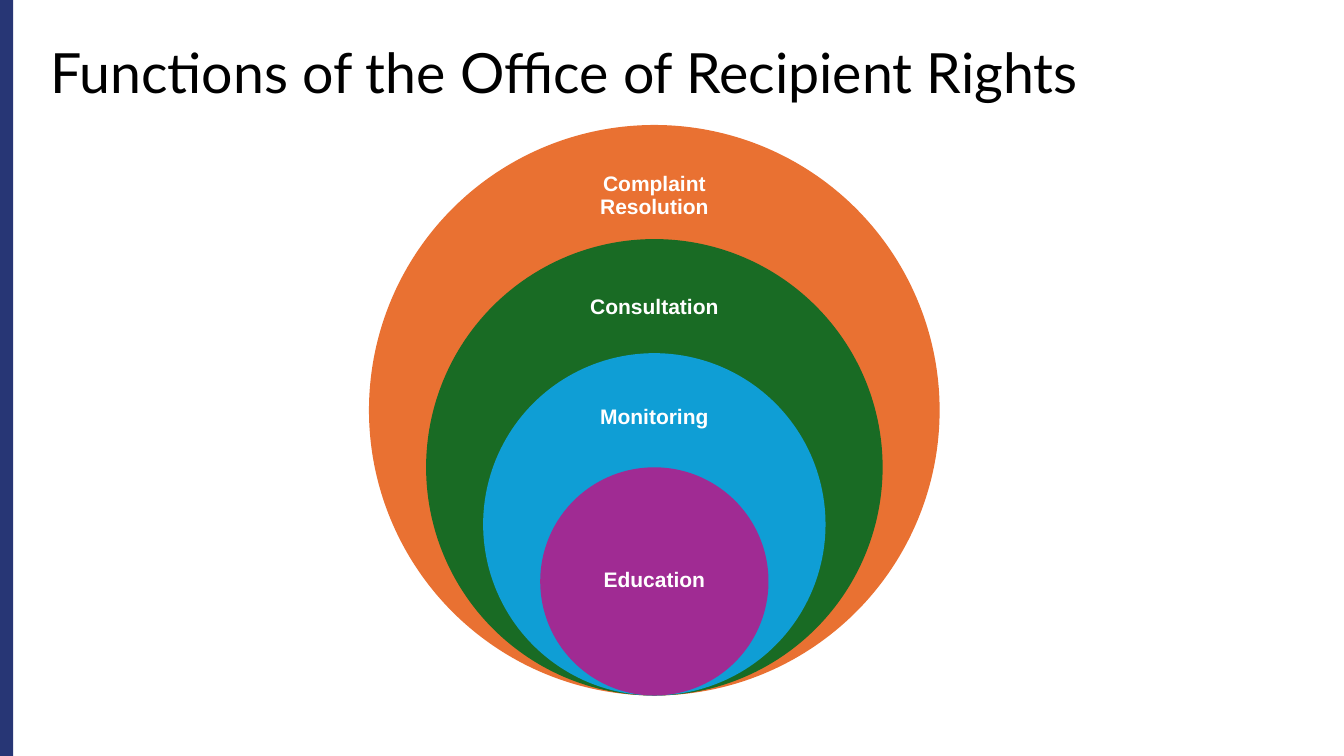
from dataclasses import dataclass

from pptx import Presentation
from pptx.dml.color import RGBColor
from pptx.enum.shapes import MSO_SHAPE as Shape
from pptx.enum.text import MSO_ANCHOR as Anchor, PP_ALIGN as Align
from pptx.util import Inches, Pt


@dataclass(frozen=True)
class Theme:
    stripe: str = "273675"
    title: str = "000000"
    label: str = "FFFFFF"
    title_font: str = "Lato"
    label_font: str = "Arial"
    title_size: float = 39.6
    label_size: float = 15


theme = Theme()

presentation = Presentation()
presentation.slide_width = Inches(13.33)
presentation.slide_height = Inches(7.5)
slide = presentation.slides.add_slide(presentation.slide_layouts[6])


def add_filled(kind, left, top, width, height, color):
    shape = slide.shapes.add_shape(
        kind, Inches(left), Inches(top), Inches(width), Inches(height))
    shape.shadow.inherit = False
    shape.fill.solid()
    shape.fill.fore_color.rgb = RGBColor.from_string(color)
    shape.line.fill.background()


def add_text(text, left, top, width, height, font, size, color):
    """Add a wrapping one-paragraph text box; return its frame and paragraph."""
    box = slide.shapes.add_textbox(
        Inches(left), Inches(top), Inches(width), Inches(height))
    frame = box.text_frame
    frame.word_wrap = True
    paragraph = frame.paragraphs[0]
    paragraph.text = text
    paragraph.line_spacing = 0.9
    paragraph.font.name = font
    paragraph.font.size = Pt(size)
    paragraph.font.color.rgb = RGBColor.from_string(color)
    return frame, paragraph


add_filled(Shape.RECTANGLE, 0, 0, 0.13, 7.5, theme.stripe)
add_text("Functions of the Office of Recipient Rights", 0.4, 0.4, 11.5, 0.76,
         theme.title_font, theme.title_size, theme.title)

# Nested circles share their lowest point; each is a fifth smaller than the outermost.
center_x, bottom, outer_diameter = 6.49, 6.9, 5.66
label_width = 1.58
functions = [  # name, circle colour, label top, label height
    ("Complaint Resolution", "E97132", 1.52, 0.85),
    ("Consultation", "196B24", 2.64, 0.82),
    ("Monitoring", "0F9ED5", 3.76, 0.76),
    ("Education", "A02B93", 5.2, 1.13),
]
for level, (name, color, label_top, label_height) in enumerate(functions):
    diameter = outer_diameter * (1 - level / 5)
    add_filled(Shape.OVAL, center_x - diameter / 2, bottom - diameter,
               diameter, diameter, color)
    frame, paragraph = add_text(
        name, center_x - label_width / 2, label_top, label_width, label_height,
        theme.label_font, theme.label_size, theme.label)
    frame.vertical_anchor = Anchor.MIDDLE
    frame.margin_left = frame.margin_right = Inches(0.12)
    frame.margin_top = frame.margin_bottom = Inches(0.12)
    paragraph.alignment = Align.CENTER
    paragraph.font.bold = True

presentation.save("out.pptx")
